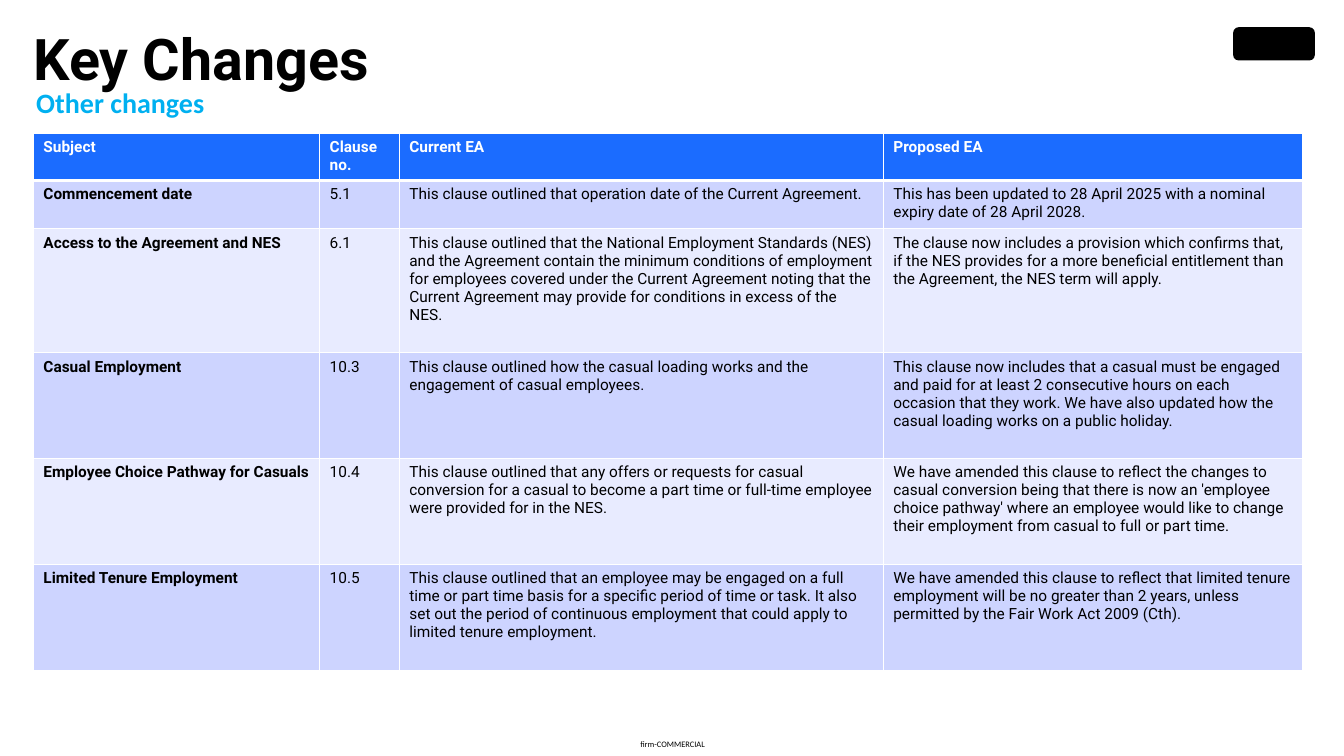
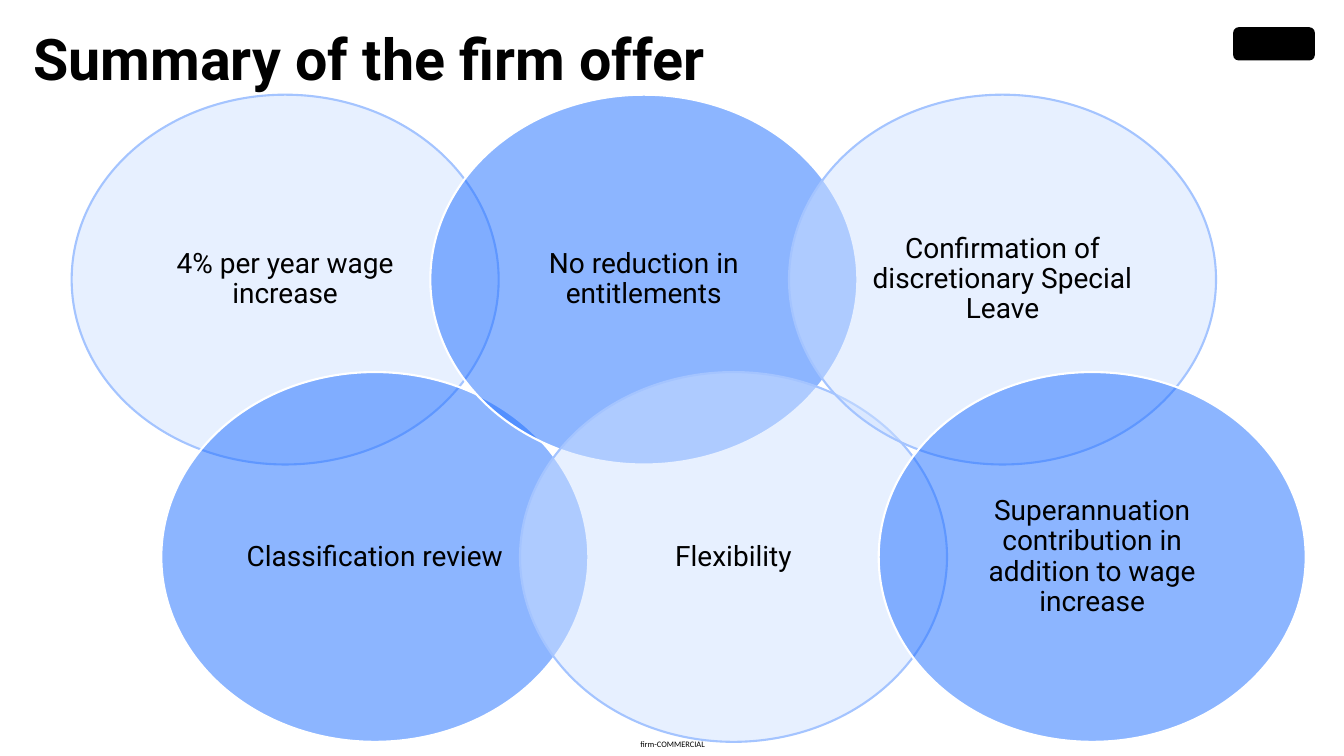
from dataclasses import dataclass

from lxml import etree
from pptx import Presentation
from pptx.dml.color import RGBColor
from pptx.enum.shapes import MSO_SHAPE
from pptx.enum.text import MSO_ANCHOR, PP_ALIGN
from pptx.oxml.ns import qn
from pptx.util import Inches, Pt

ELLIPSE = MSO_SHAPE.OVAL
BADGE = MSO_SHAPE.ROUNDED_RECTANGLE
LEFT, CENTER = PP_ALIGN.LEFT, PP_ALIGN.CENTER
TOP, MIDDLE = MSO_ANCHOR.TOP, MSO_ANCHOR.MIDDLE

WIDTH, HEIGHT = Inches(13.33), Inches(7.5)
HEADING_FONT, SUPPORT_FONT = "Roboto", "Calibri"
BLACK, WHITE, BLUE, CYAN = "000000", "FFFFFF", "1B6CFF", "00B0F0"
PALE_BLUE, RIM_BLUE = "D1E2FF", "A4C4FF"
BAND_DARK, BAND_LIGHT = "CDD4FF", "E8EBFF"

HEADERS = ("Subject", "Clause no.", "Current EA", "Proposed EA")
CHANGES = (
    ("Commencement date", "5.1",
     "This clause outlined that operation date of the Current Agreement.",
     "This has been updated to 28 April 2025 with a nominal expiry date of "
     "28 April 2028."),
    ("Access to the Agreement and NES", "6.1",
     "This clause outlined that the National Employment Standards (NES) and the "
     "Agreement contain the minimum conditions of employment for employees covered "
     "under the Current Agreement noting that the Current Agreement may provide for "
     "conditions in excess of the NES.",
     "The clause now includes a provision which confirms that, if the NES provides "
     "for a more beneficial entitlement than the Agreement, the NES term will apply."),
    ("Casual Employment", "10.3",
     "This clause outlined how the casual loading works and the engagement of casual "
     "employees.",
     "This clause now includes that a casual must be engaged and paid for at least "
     "2 consecutive hours on each occasion that they work. We have also updated how "
     "the casual loading works on a public holiday."),
    ("Employee Choice Pathway for Casuals", "10.4",
     "This clause outlined that any offers or requests for casual conversion for a "
     "casual to become a part time or full-time employee were provided for in the NES.",
     "We have amended this clause to reflect the changes to casual conversion being "
     "that there is now an 'employee choice pathway' where an employee would like to "
     "change their employment from casual to full or part time."),
    ("Limited Tenure Employment", "10.5",
     "This clause outlined that an employee may be engaged on a full time or part time "
     "basis for a specific period of time or task. It also set out the period of "
     "continuous employment that could apply to limited tenure employment.",
     "We have amended this clause to reflect that limited tenure employment will be no "
     "greater than 2 years, unless permitted by the Fair Work Act 2009 (Cth)."),
)
COLUMN_WEIGHTS = (2.84, 0.79, 4.8, 4.16)
ROW_WEIGHTS = (0.47, 0.48, 1.23, 1.05, 1.05, 1.05)

OFFERS = (
    ("4% per year wage increase", "Classification review"),
    ("No reduction in entitlements", "Flexibility"),
    ("Confirmation of discretionary Special Leave",
     "Superannuation contribution in addition to wage increase"),
)
COLUMN_STEP, ROW_STEP, ROW_SHIFT = 0.84, 0.75, 0.21


@dataclass
class Box:
    """A rectangle in EMU."""
    left: int
    top: int
    width: int
    height: int

    def bounds(self):
        """Return the four lengths in the order python-pptx takes them."""
        return self.left, self.top, self.width, self.height


def region(left, top, width, height):
    """Return a box given in percent of the slide's width and height."""
    return Box(int(WIDTH * left / 100), int(HEIGHT * top / 100),
               int(WIDTH * width / 100), int(HEIGHT * height / 100))


def rgb(hex_code):
    """Turn a hex string into a colour."""
    return RGBColor.from_string(hex_code)


def write(frame, text, size, font=HEADING_FONT, color=BLACK, bold=False,
          align=LEFT, spacing=1.0):
    """Write one formatted paragraph into a text frame."""
    paragraph = frame.paragraphs[0]
    paragraph.alignment = align
    paragraph.line_spacing = spacing
    run = paragraph.add_run()
    run.text = text
    run.font.size = Pt(size)
    run.font.name = font
    run.font.bold = bold
    run.font.color.rgb = rgb(color)


def add_label(slide, box, text, size, **style):
    """Add a text box without margins."""
    frame = slide.shapes.add_textbox(*box.bounds()).text_frame
    frame.word_wrap = True
    frame.vertical_anchor = TOP
    frame.margin_left = frame.margin_right = frame.margin_top = frame.margin_bottom = 0
    write(frame, text, size, **style)


def add_filled(slide, kind, box, color):
    """Add a flat preset shape with a solid fill."""
    shape = slide.shapes.add_shape(kind, *box.bounds())
    shape.shadow.inherit = False
    shape.fill.solid()
    shape.fill.fore_color.rgb = rgb(color)
    return shape


def add_page(deck, title):
    """Add a blank slide with the shared title, badge and footer."""
    slide = deck.slides.add_slide(deck.slide_layouts[6])
    add_label(slide, region(47.64, 97.73, 5.03, 1.33), "firm-COMMERCIAL", 6,
              font=SUPPORT_FONT)
    badge = add_filled(slide, BADGE, region(91.75, 3.6, 6.08, 4.4), BLACK)
    badge.line.fill.background()
    add_label(slide, region(2.48, 4.4, 86.5, 13.87), title, 41, bold=True, spacing=0.85)
    return slide


def set_borders(cell, bottom):
    """Draw white borders round a cell, with the bottom one in the given points."""
    properties = cell._tc.get_or_add_tcPr()
    for side, points in (("L", 1), ("R", 1), ("T", 1), ("B", bottom)):
        line = etree.SubElement(properties, qn(f"a:ln{side}"), w=str(Pt(points)))
        fill = etree.SubElement(line, qn("a:solidFill"))
        etree.SubElement(fill, qn("a:srgbClr"), val=WHITE)


def add_changes_table(slide, box):
    """Fill the box with the table of clause changes."""
    table = slide.shapes.add_table(len(ROW_WEIGHTS), len(COLUMN_WEIGHTS),
                                   *box.bounds()).table
    for column, weight in zip(table.columns, COLUMN_WEIGHTS):
        column.width = int(box.width * weight / sum(COLUMN_WEIGHTS))
    for row, weight in zip(table.rows, ROW_WEIGHTS):
        row.height = int(box.height * weight / sum(ROW_WEIGHTS))
    for r, entries in enumerate((HEADERS, *CHANGES)):
        is_header = r == 0
        band = BLUE if is_header else (BAND_LIGHT, BAND_DARK)[r % 2]
        for c, entry in enumerate(entries):
            cell = table.cell(r, c)
            set_borders(cell, 3 if is_header else 1)
            cell.fill.solid()
            cell.fill.fore_color.rgb = rgb(band)
            write(cell.text_frame, entry, 11, color=WHITE if is_header else BLACK,
                  bold=is_header or c == 0)


def add_offer(slide, box, text, strong):
    """Add one half-transparent ellipse with its offer."""
    ellipse = add_filled(slide, ELLIPSE, box, BLUE if strong else PALE_BLUE)
    color = ellipse._element.spPr.find(qn("a:solidFill"))[0]
    etree.SubElement(color, qn("a:alpha"), val="50000")
    ellipse.line.color.rgb = rgb(WHITE if strong else RIM_BLUE)
    ellipse.line.width = Pt(1.5)
    frame = ellipse.text_frame
    frame.word_wrap = True
    frame.vertical_anchor = MIDDLE
    frame.margin_left = frame.margin_right = Inches(0.08)
    frame.margin_top = frame.margin_bottom = Inches(0.08)
    write(frame, text, 20, align=CENTER, spacing=0.9)


def add_offer_ellipses(slide, box):
    """Fill the box with two shifted rows of overlapping ellipses."""
    width = box.width / (1 + COLUMN_STEP * (len(OFFERS) - 1) + ROW_SHIFT)
    height = box.height / (1 + ROW_STEP)
    for c, pair in enumerate(OFFERS):
        for r, offer in enumerate(pair):
            place = Box(int(box.left + width * (COLUMN_STEP * c + ROW_SHIFT * r)),
                        int(box.top + height * ROW_STEP * r), int(width), int(height))
            add_offer(slide, place, offer, strong=(c + r) % 2 == 1)


def add_changes_slide(deck):
    """Add the slide with the other key changes."""
    slide = add_page(deck, "Key Changes")
    add_label(slide, region(2.7, 11.33, 17.85, 7.07), "Other changes", 20,
              font=SUPPORT_FONT, color=CYAN, bold=True)
    add_changes_table(slide, region(2.48, 17.6, 94.45, 71.07))


def add_summary_slide(deck):
    """Add the slide that sums up the offer."""
    slide = add_page(deck, "Summary of the firm offer")
    add_offer_ellipses(slide, region(5.33, 12.53, 91.82, 85.6))


def main():
    """Build and save the presentation."""
    deck = Presentation()
    deck.slide_width, deck.slide_height = WIDTH, HEIGHT
    add_changes_slide(deck)
    add_summary_slide(deck)
    deck.save("out.pptx")


if __name__ == "__main__":
    main()
